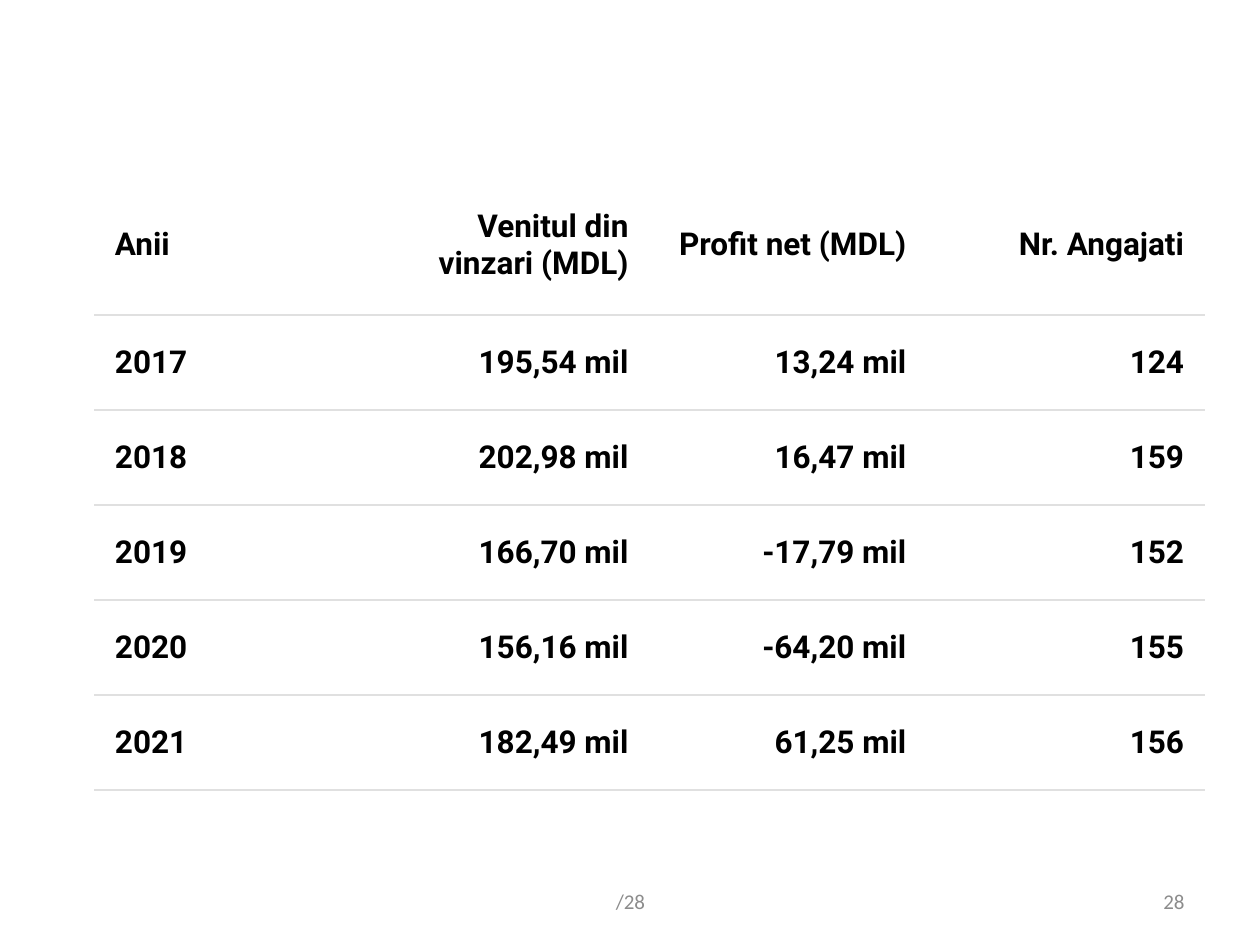
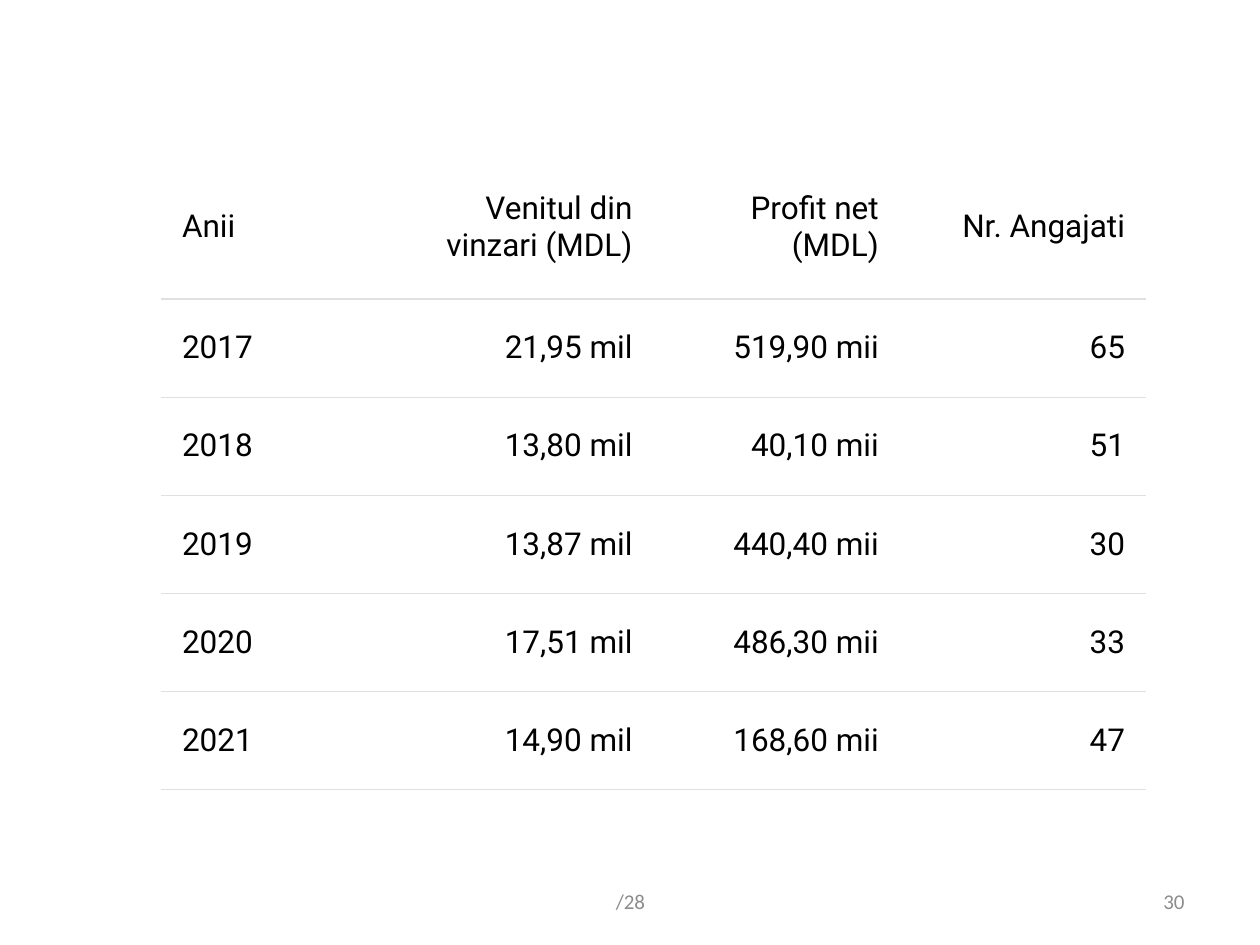
from lxml import etree
from pptx import Presentation
from pptx.dml.color import RGBColor
from pptx.enum.text import MSO_ANCHOR, PP_ALIGN
from pptx.oxml.ns import qn
from pptx.util import Emu, Pt

LEFT, MID, RIGHT = PP_ALIGN.LEFT, PP_ALIGN.CENTER, PP_ALIGN.RIGHT
MIDDLE = MSO_ANCHOR.MIDDLE
WHITE = RGBColor(0xFF, 0xFF, 0xFF)
BLACK = RGBColor(0x00, 0x00, 0x00)
GREY = RGBColor(0x8C, 0x8C, 0x8C)
RULE = RGBColor(0xE0, 0xE0, 0xE0)
BLANK = 6
PAD = 21

HEAD = ["Anii", "Venitul din vinzari (MDL)", "Profit net (MDL)", "Nr. Angajati"]
LARGE = [
    ["2017", "195,54 mil", "13,24 mil", "124"],
    ["2018", "202,98 mil", "16,47 mil", "159"],
    ["2019", "166,70 mil", "-17,79 mil", "152"],
    ["2020", "156,16 mil", "-64,20 mil", "155"],
    ["2021", "182,49 mil", "61,25 mil", "156"],
]
SMALL = [
    ["2017", "21,95 mil", "519,90 mii", "65"],
    ["2018", "13,80 mil", "40,10 mii", "51"],
    ["2019", "13,87 mil", "440,40 mii", "30"],
    ["2020", "17,51 mil", "486,30 mii", "33"],
    ["2021", "14,90 mil", "168,60 mii", "47"],
]


def px(n):
    return Emu(round(n * 914400 / 126))


class Deck:
    def __init__(self):
        self.prs = Presentation()
        self.prs.slide_width, self.prs.slide_height = px(1260), px(945)
        self.slide = None

    def page(self, number):
        """Start a slide with its footer."""
        self.slide = self.prs.slides.add_slide(self.prs.slide_layouts[BLANK])
        self.slide.background.fill.solid()
        self.slide.background.fill.fore_color.rgb = WHITE
        self.label("/28", 431, 399, MID)
        self.label(number, 903, 294, RIGHT)

    def style(self, frame, align, font, size, color, bold=False):
        para = frame.paragraphs[0]
        para.alignment = align
        for run in para.runs:
            run.font.name, run.font.size = font, Pt(size)
            run.font.bold = bold
            run.font.color.rgb = color

    def label(self, text, x, w, align):
        box = self.slide.shapes.add_textbox(px(x), px(876), px(w), px(50))
        frame = box.text_frame
        frame.word_wrap = True
        frame.vertical_anchor = MIDDLE
        frame.text = text
        self.style(frame, align, "Calibri", 12, GREY)

    def edge(self, cell, side, shown):
        line = etree.SubElement(cell._tc.get_or_add_tcPr(), qn("a:ln" + side))
        line.set("w", str(Pt(0.75)))
        if shown:
            fill = etree.SubElement(line, qn("a:solidFill"))
            etree.SubElement(fill, qn("a:srgbClr")).set("val", str(RULE))
        else:
            etree.SubElement(line, qn("a:noFill"))

    def cell(self, cell, text, align, bold, first):
        cell.text = text
        cell.vertical_anchor = MIDDLE
        cell.margin_left = cell.margin_right = px(PAD)
        cell.margin_top = cell.margin_bottom = px(PAD)
        self.style(cell.text_frame, align, "Roboto", 18, BLACK, bold)
        for side in "LRTB":
            self.edge(cell, side, side == "B" or side == "T" and not first)
        cell.fill.solid()
        cell.fill.fore_color.rgb = WHITE

    def table(self, body, x, y, w, top, h, bold=False):
        """Draw HEAD, top px high, over body rows that share h px."""
        rows = [HEAD] + body
        grid = self.slide.shapes.add_table(
            len(rows), len(HEAD), px(x), px(y), px(w), px(top + h)).table
        grid.first_row = grid.horz_banding = False
        for col in grid.columns:
            col.width = px(w / len(HEAD))
        for i, row in enumerate(rows):
            grid.rows[i].height = px(h / len(body) if i else top)
            for j, text in enumerate(row):
                self.cell(grid.cell(i, j), text, RIGHT if j else LEFT, bold, i == 0)


def main():
    deck = Deck()
    deck.page("28")
    deck.table(LARGE, 94, 175, 1111, 140, 475, bold=True)
    deck.page("30")
    deck.table(SMALL, 161, 155, 985, 144, 491)
    deck.prs.save("out.pptx")


if __name__ == "__main__":
    main()
